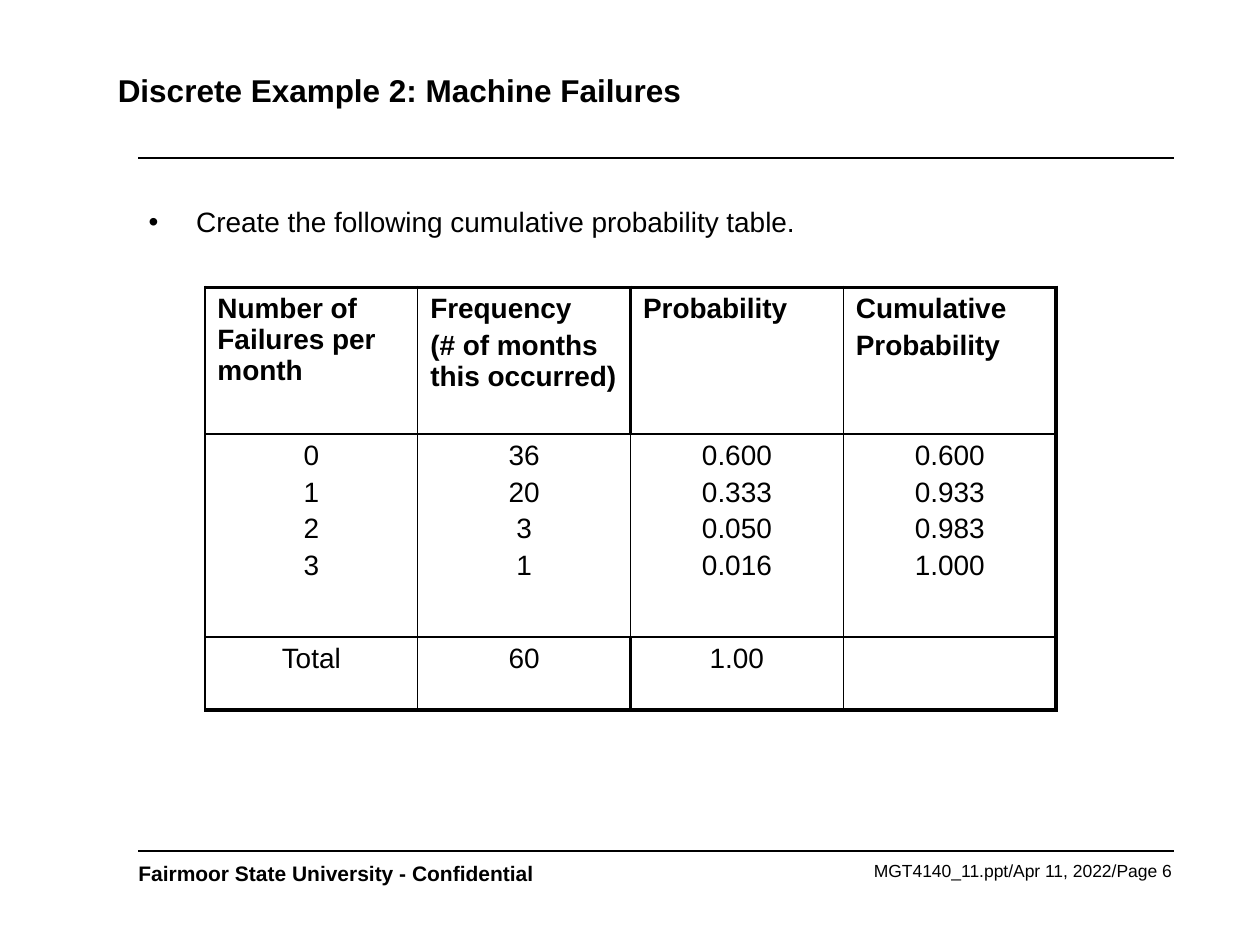
from lxml import etree
from pptx import Presentation
from pptx import util as u
from pptx.dml.color import RGBColor
from pptx.enum import shapes, text
from pptx.oxml.ns import qn

BLACK = "000000"
LEFT, CENTER, RIGHT = (text.PP_ALIGN.LEFT, text.PP_ALIGN.CENTER, text.PP_ALIGN.RIGHT)
TITLE = "Discrete Example 2: Machine Failures"
BULLET = "Create the following cumulative probability table."
FOOTERS = [
    ("Fairmoor State University - Confidential", (2.54, 17.22, 9.75, 0.76), 12, True, LEFT),
    ("MGT4140_11.ppt/Apr 11, 2022/Page 6", (14.17, 17.22, 9.7, 0.66), 10, False, RIGHT),
]
RULES = [3.18, 17.15]
RULE_ENDS = (2.79, 23.67)
TABLE_AT = (4.13, 5.79)
COLUMN_WIDTH = 4.29
ROW_HEIGHTS = [2.96, 4.09, 1.47]
ROWS = [
    [["Number of Failures per month"], ["Frequency", "(# of months this occurred)"],
     ["Probability"], ["Cumulative", "Probability"]],
    [["0", "1", "2", "3"], ["36", "20", "3", "1"],
     ["0.600", "0.333", "0.050", "0.016"], ["0.600", "0.933", "0.983", "1.000"]],
    [["Total"], ["60"], ["1.00"], []],
]
THIN, THICK = 1, 2.25


def color(value):
    return RGBColor.from_string(value)


def assign(target, values):
    for name, value in values.items():
        setattr(target, name, value)


def place(shape, left, top, width, height):
    sides = {"left": left, "top": top, "width": width, "height": height}
    assign(shape, {name: u.Cm(value) for name, value in sides.items()})


def write(frame, lines, size, bold=False, align=LEFT, before=0):
    for index, line in enumerate(lines):
        para = frame.paragraphs[0] if index == 0 else frame.add_paragraph()
        assign(para, {"alignment": align, "space_before": u.Pt(before)})
        span = para.add_run()
        span.text = line
        assign(span.font, {"name": "Arial", "size": u.Pt(size), "bold": bold})
        span.font.color.rgb = color(BLACK)


def set_frame(frame, anchor=text.MSO_ANCHOR.TOP):
    assign(frame, {"word_wrap": True, "auto_size": text.MSO_AUTO_SIZE.NONE,
                   "vertical_anchor": anchor})


def add_border(cell, side, width):
    line = etree.SubElement(cell._tc.get_or_add_tcPr(), qn(f"a:ln{side}"), w=str(u.Pt(width)))
    fill = etree.SubElement(line, qn("a:solidFill"))
    etree.SubElement(fill, qn("a:srgbClr"), val=BLACK)


def add_rule(page, top):
    start, end = RULE_ENDS
    rule = page.shapes.add_connector(
        shapes.MSO_CONNECTOR.STRAIGHT, u.Cm(start), u.Cm(top), u.Cm(end), u.Cm(top))
    rule.line.color.rgb = color(BLACK)
    rule.line.width = u.Pt(1)
    etree.SubElement(rule._element.spPr, qn("a:effectLst"))


def add_table(page):
    count = len(ROWS[0])
    last = len(ROWS) - 1
    table = page.shapes.add_table(
        len(ROWS), count, *map(u.Cm, TABLE_AT),
        u.Cm(COLUMN_WIDTH * count), u.Cm(sum(ROW_HEIGHTS))).table
    assign(table, {"first_row": False, "horz_banding": False})
    for column in table.columns:
        column.width = u.Cm(COLUMN_WIDTH)
    for r, cells in enumerate(ROWS):
        table.rows[r].height = u.Cm(ROW_HEIGHTS[r])
        middle = THIN if r == 1 else THICK
        verticals = [THIN, THIN, middle, THIN, THICK]
        for c, lines in enumerate(cells):
            cell = table.cell(r, c)
            write(cell.text_frame, lines, 16, r == 0, LEFT if r == 0 else CENTER, 3.2)
            borders = {"L": verticals[c], "R": verticals[c + 1],
                       "T": THICK if r == 0 else THIN, "B": THICK if r == last else THIN}
            for side, width in borders.items():
                add_border(cell, side, width)
            cell.fill.background()


def main():
    deck = Presentation()
    assign(deck, {"slide_width": u.Cm(25.4), "slide_height": u.Cm(19.05)})
    page = deck.slides.add_slide(deck.slide_layouts[1])

    for line, box_at, size, bold, align in FOOTERS:
        box = page.shapes.add_textbox(*map(u.Cm, box_at))
        set_frame(box.text_frame)
        write(box.text_frame, [line], size, bold, align)
    for top in RULES:
        add_rule(page, top)

    title, body = page.placeholders
    place(title, 2.12, 0.64, 21.59, 2.34)
    set_frame(title.text_frame, text.MSO_ANCHOR.MIDDLE)
    write(title.text_frame, [TITLE], 18, True)

    place(body, 2.74, 3.18, 20.96, 13.77)
    set_frame(body.text_frame)
    body.text_frame.margin_top = u.Cm(0.95)
    write(body.text_frame, [BULLET], 16)
    props = body.text_frame.paragraphs[0]._p.get_or_add_pPr()
    props.set("marL", str(u.Cm(0.96)))
    props.set("indent", str(u.Cm(-0.96)))
    etree.SubElement(props, qn("a:buChar"), char="•")

    add_table(page)
    deck.save("out.pptx")


if __name__ == "__main__":
    main()
